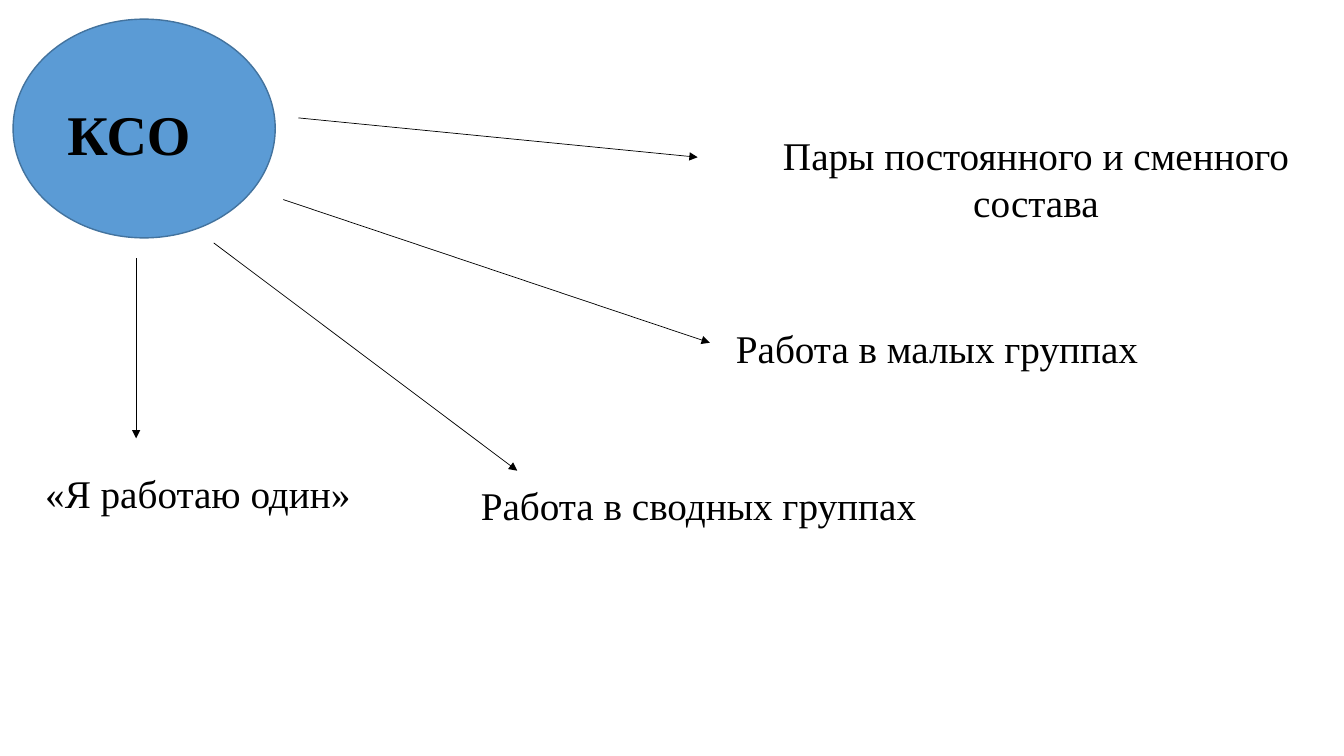
"""Build the КСО slide: one circle with arrows to four forms of work."""
from typing import NamedTuple

from lxml import etree
from pptx import Presentation
from pptx.dml.color import RGBColor
from pptx.enum.shapes import MSO_CONNECTOR, MSO_SHAPE
from pptx.enum.text import MSO_AUTO_SIZE, PP_ALIGN
from pptx.oxml.ns import qn
from pptx.slide import Slide
from pptx.util import Inches, Pt

OVAL = MSO_SHAPE.OVAL
STRAIGHT = MSO_CONNECTOR.STRAIGHT
GROW = MSO_AUTO_SIZE.SHAPE_TO_FIT_TEXT
LEFT = PP_ALIGN.LEFT
CENTER = PP_ALIGN.CENTER
FONT = "Times New Roman"
BLACK = "000000"
BLUE = "5B9BD5"
DARK_BLUE = "43739E"


class Label(NamedTuple):
    text: str
    left: float
    top: float
    width: float
    height: float = 0.57
    size: int = 28
    bold: bool = False
    align: PP_ALIGN = LEFT


class Arrow(NamedTuple):
    start_x: float
    start_y: float
    end_x: float
    end_y: float


LABELS = [
    Label("КСО", 0.57, 0.94, 6.02, 0.77, size=40, bold=True),
    Label("Пары постоянного и сменного состава", 7.04, 1.25, 6.47, 1.04, align=CENTER),
    Label("«Я работаю один»", 0.35, 4.61, 5.92),
    Label("Работа в малых группах", 7.2, 3.17, 5.79),
    Label("Работа в сводных группах", 4.67, 4.73, 6.38),
]

ARROWS = [
    Arrow(1.35, 2.56, 1.35, 4.35),
    Arrow(2.81, 1.98, 7.04, 3.4),
    Arrow(2.96, 1.17, 6.92, 1.56),
    Arrow(2.12, 2.41, 5.13, 4.67),
]


def color(value: str) -> RGBColor:
    """Turn a hex string into a colour."""
    return RGBColor.from_string(value)


def draw_circle(page: Slide) -> None:
    """Draw the blue circle behind the title."""
    circle = page.shapes.add_shape(OVAL, Inches(0.13), Inches(0.19), Inches(2.6), Inches(2.17))
    circle.shadow.inherit = False
    circle.fill.solid()
    circle.fill.fore_color.rgb = color(BLUE)
    circle.line.color.rgb = color(DARK_BLUE)
    circle.line.width = Pt(1)


def draw_label(page: Slide, label: Label) -> None:
    """Draw one text box."""
    box = page.shapes.add_textbox(
        Inches(label.left), Inches(label.top), Inches(label.width), Inches(label.height)
    )
    frame = box.text_frame
    frame.word_wrap = True
    frame.auto_size = GROW
    para = frame.paragraphs[0]
    para.alignment = label.align
    span = para.add_run()
    span.text = label.text
    span.font.name = FONT
    span.font.size = Pt(label.size)
    span.font.bold = label.bold
    span.font.color.rgb = color(BLACK)


def draw_arrow(page: Slide, arrow: Arrow) -> None:
    """Draw one thin line with a triangle at its end."""
    connector = page.shapes.add_connector(STRAIGHT, *(Inches(length) for length in arrow))
    connector.line.color.rgb = color(BLACK)
    connector.line.width = Pt(0.5)
    properties = connector.element.spPr
    outline = properties.find(qn("a:ln"))
    etree.SubElement(outline, qn("a:tailEnd"), type="triangle")
    etree.SubElement(properties, qn("a:effectLst"))


def main() -> None:
    """Build and save the deck."""
    deck = Presentation()
    deck.slide_width = Inches(13.33)
    deck.slide_height = Inches(7.5)
    page = deck.slides.add_slide(deck.slide_layouts[6])
    draw_circle(page)
    for label in LABELS:
        draw_label(page, label)
    for arrow in ARROWS:
        draw_arrow(page, arrow)
    deck.save("out.pptx")


if __name__ == "__main__":
    main()
